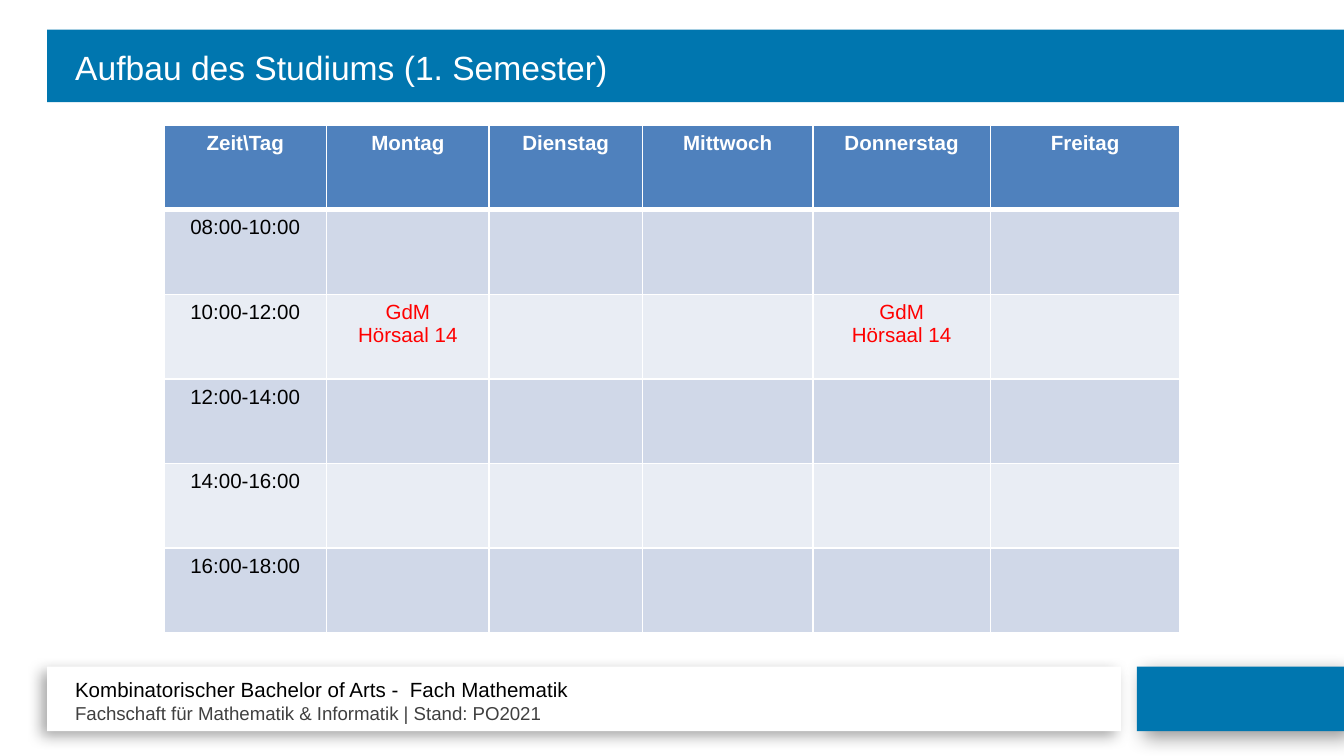
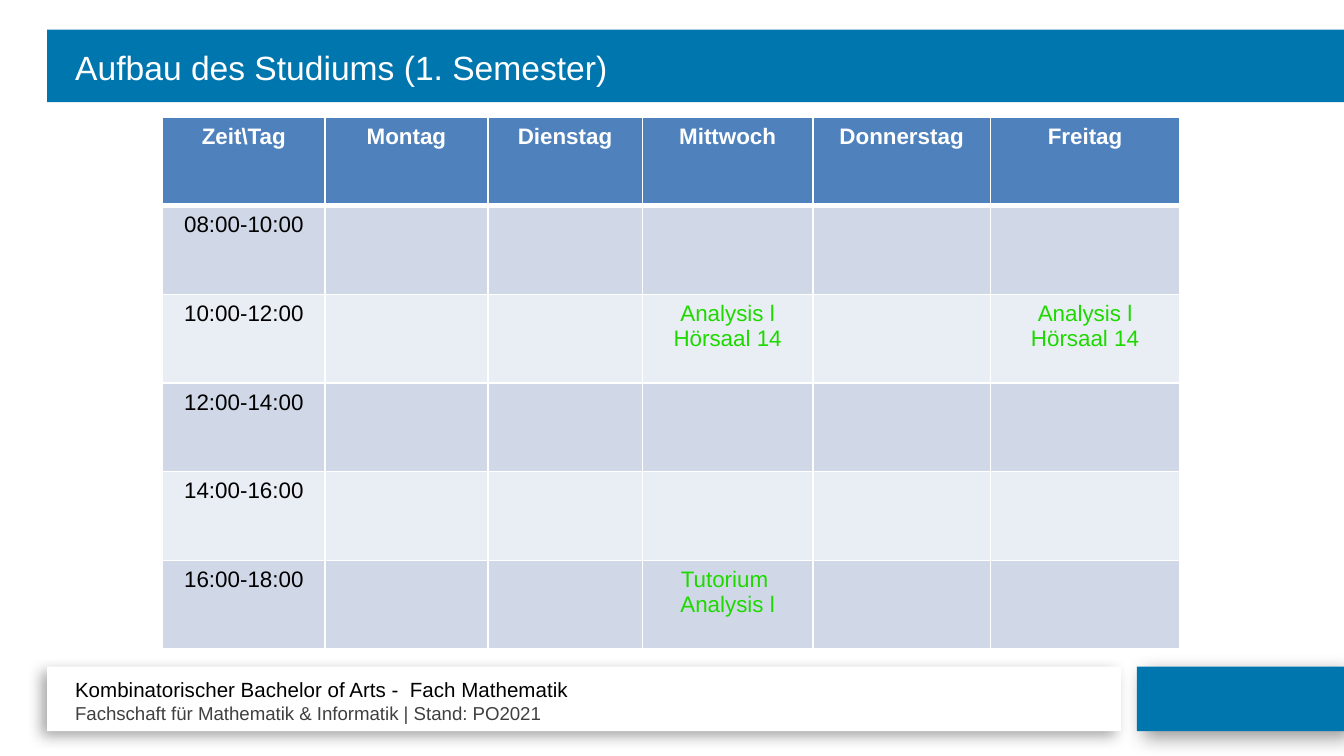
from dataclasses import dataclass

from lxml.etree import SubElement
from pptx import Presentation
from pptx.dml.color import RGBColor
from pptx.enum.shapes import MSO_SHAPE as Shape
from pptx.enum.text import MSO_ANCHOR as Anchor, MSO_AUTO_SIZE as AutoSize, PP_ALIGN as Align
from pptx.oxml.ns import qn
from pptx.util import Inches, Pt

TITLE_ONLY = 5


@dataclass(frozen=True)
class Theme:
    font: str = "Arial"
    white: str = "FFFFFF"
    black: str = "000000"
    grey: str = "404040"
    band: str = "0076AF"
    header: str = "4F81BD"
    stripes: tuple = ("D0D8E8", "E9EDF4")
    lecture_red: str = "FF0000"
    lecture_green: str = "1DD900"
    title_size: int = 18
    footer_size: int = 11
    small_size: int = 10
    rule: int = 1
    header_rule: int = 3


THEME = Theme()
DAYS = ["Montag", "Dienstag", "Mittwoch", "Donnerstag", "Freitag"]
TIMES = [f"{hour:02}:00-{hour + 2:02}:00" for hour in range(8, 18, 2)]
FOOTER = [
    ("Kombinatorischer Bachelor of Arts -  Fach Mathematik", THEME.footer_size, THEME.black),
    ("Fachschaft für Mathematik & Informatik | Stand: PO2021", THEME.small_size, THEME.grey),
]


def place(shape, left, top, width, height):
    shape.left, shape.top = Inches(left), Inches(top)
    shape.width, shape.height = Inches(width), Inches(height)


def add_solid(parent, color):
    fill = SubElement(parent, qn("a:solidFill"))
    SubElement(fill, qn("a:srgbClr"), val=color)


def add_shadow(shape, opacity, blur, distance, angle):
    """Give the shape an outer shadow: percent, points, points, degrees."""
    effects = shape.element.spPr.find(qn("a:effectLst"))
    shadow = SubElement(effects, qn("a:outerShdw"), blurRad=str(Pt(blur)),
                        dist=str(Pt(distance)), dir=str(angle * 60000),
                        algn="ctr", rotWithShape="0")
    color = SubElement(shadow, qn("a:srgbClr"), val=THEME.black)
    SubElement(color, qn("a:alpha"), val=str(opacity * 1000))


def add_borders(cell, top, bottom):
    properties = cell._tc.get_or_add_tcPr()
    widths = {"L": THEME.rule, "R": THEME.rule, "T": top, "B": bottom}
    for side, width in widths.items():
        add_solid(SubElement(properties, qn(f"a:ln{side}"), w=str(Pt(width))), THEME.white)


class TimetableDeck:
    def __init__(self, theme):
        self.theme = theme
        self.deck = Presentation()
        self.deck.slide_width = Inches(10)
        self.deck.slide_height = Inches(10 * 9 / 16)
        self.page = None

    def add_page(self, title):
        self.page = self.deck.slides.add_slide(self.deck.slide_layouts[TITLE_ONLY])
        self.add_band(0.35, 4.96, 7.99, 0.48, self.theme.white, (34, 7.5, 4, 145))
        self.add_band(8.46, 4.96, 1.54, 0.48, self.theme.band, (42, 10.8, 5, 40))
        self.add_footer()
        self.add_band(0.35, 0.22, 9.69, 0.54, self.theme.band)
        self.add_title(title)

    def style(self, para, size, color, bold=False, align=Align.LEFT):
        para.alignment = align
        para.font.name, para.font.size, para.font.bold = self.theme.font, Pt(size), bold
        para.font.color.rgb = RGBColor.from_string(color)

    def add_band(self, left, top, width, height, color, shadow=None):
        band = self.page.shapes.add_shape(
            Shape.RECTANGLE, Inches(left), Inches(top), Inches(width), Inches(height))
        band.fill.solid()
        band.fill.fore_color.rgb = RGBColor.from_string(color)
        band.line.fill.background()
        band.shadow.inherit = False
        if shadow:
            add_shadow(band, *shadow)

    def add_footer(self):
        box = self.page.shapes.add_textbox(
            Inches(0.46), Inches(4.99), Inches(5.98), Inches(0.47))
        frame = box.text_frame
        frame.word_wrap = True
        frame.auto_size = AutoSize.SHAPE_TO_FIT_TEXT
        frame.text = "\n".join(text for text, _, _ in FOOTER)
        for para, (_, size, color) in zip(frame.paragraphs, FOOTER):
            self.style(para, size, color)

    def add_title(self, text):
        """Fill the title placeholder and bring it in front of its band."""
        title = self.page.shapes.title
        place(title, 0.46, 0.23, 8.41, 0.54)
        frame = title.text_frame
        frame.text = text
        frame.auto_size = AutoSize.NONE
        frame.vertical_anchor = Anchor.MIDDLE
        self.style(frame.paragraphs[0], self.theme.title_size, self.theme.white)
        title.element.getparent().append(title.element)

    def add_timetable(self, left, top, columns, row_height, size, lectures, color):
        """Draw the week; lectures maps (time, day) to the text of a cell."""
        theme = self.theme
        rows = [["Zeit\\Tag", *DAYS]]
        rows += [[time, *(lectures.get((time, day), "") for day in DAYS)] for time in TIMES]
        table = self.page.shapes.add_table(
            len(rows), len(columns), Inches(left), Inches(top),
            Inches(sum(columns)), Inches(row_height * len(rows))).table
        for column, width in zip(table.columns, columns):
            column.width = Inches(width)
        for y, row in enumerate(rows):
            is_header = y == 0
            fill = theme.header if is_header else theme.stripes[(y - 1) % 2]
            for x, text in enumerate(row):
                cell = table.cell(y, x)
                add_borders(cell, theme.header_rule if y == 1 else theme.rule,
                            theme.header_rule if is_header else theme.rule)
                cell.fill.solid()
                cell.fill.fore_color.rgb = RGBColor.from_string(fill)
                cell.text = text
                ink = theme.white if is_header else color if x else theme.black
                for para in cell.text_frame.paragraphs:
                    self.style(para, size, ink, is_header, Align.CENTER)


def main():
    timetable = TimetableDeck(THEME)
    title = "Aufbau des Studiums (1. Semester)"

    basics = "GdM\nHörsaal 14"
    timetable.add_page(title)
    timetable.add_timetable(
        1.22, 0.93, [1.21, 1.21, 1.14, 1.27, 1.32, 1.41], 0.63, 11,
        {("10:00-12:00", "Montag"): basics, ("10:00-12:00", "Donnerstag"): basics},
        THEME.lecture_red)

    analysis = "Analysis l\nHörsaal 14"
    timetable.add_page(title)
    timetable.add_timetable(
        1.21, 0.87, [1.21, 1.21, 1.15, 1.27, 1.32, 1.41], 0.66, 12,
        {("10:00-12:00", "Mittwoch"): analysis, ("10:00-12:00", "Freitag"): analysis,
         ("16:00-18:00", "Mittwoch"): "Tutorium \nAnalysis l"},
        THEME.lecture_green)

    timetable.deck.save("out.pptx")


if __name__ == "__main__":
    main()
